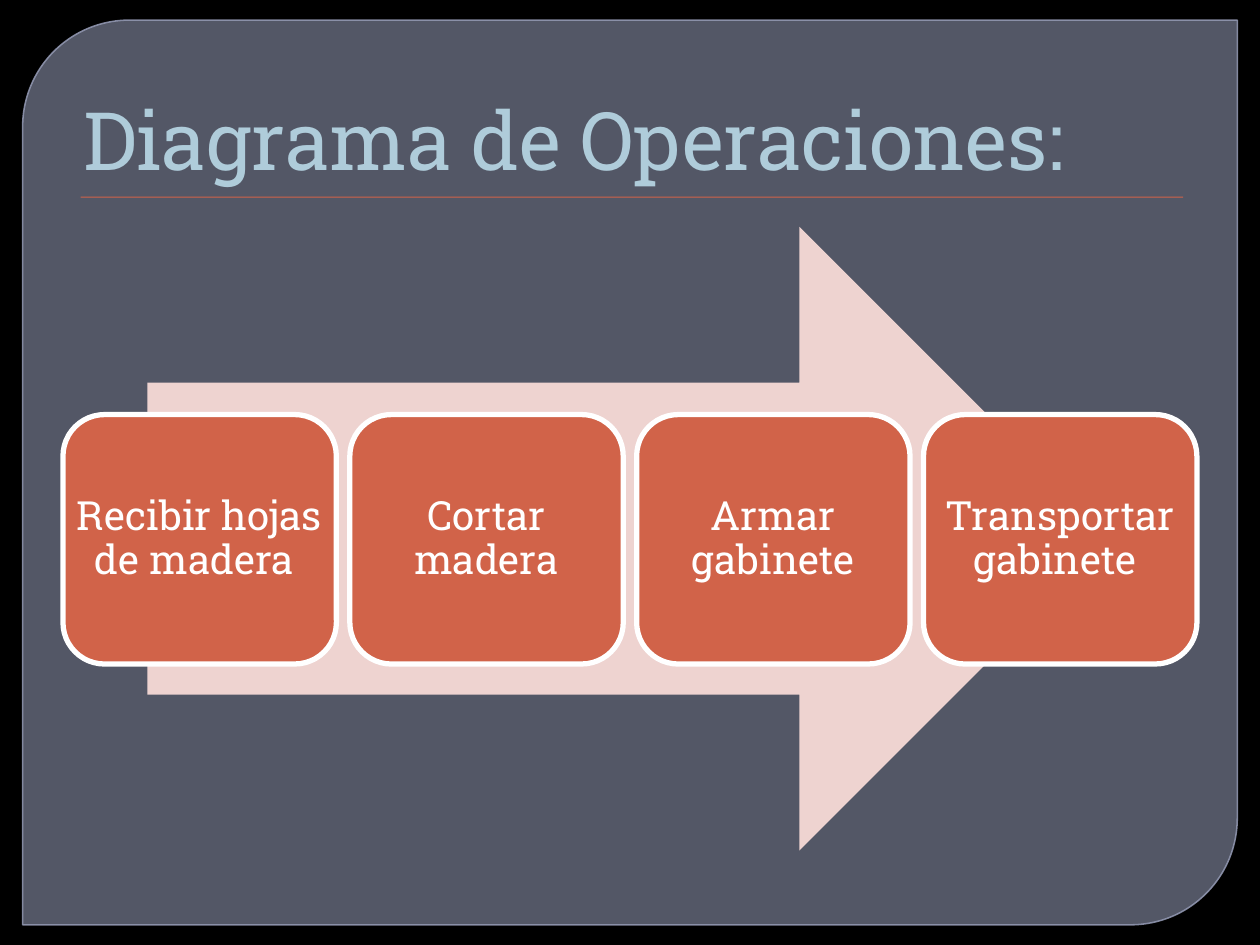
from dataclasses import dataclass

from lxml import etree
from pptx import Presentation
from pptx.dml.color import RGBColor
from pptx.enum import shapes, text
from pptx.oxml.ns import qn
from pptx.util import Inches, Pt

KIND = shapes.MSO_SHAPE


@dataclass(frozen=True)
class Theme:
    back: str = "000000"
    panel: str = "80869E"
    edge: str = "9298B2"
    accent: str = "D16349"
    arrow: str = "EED3D0"
    title: str = "AFCCDA"
    white: str = "FFFFFF"
    font: str = "Roboto Slab"
    big: int = 46
    small: int = 23


@dataclass(frozen=True)
class Box:
    left: float
    top: float
    width: float
    height: float

    def emu(self):
        return [Inches(v) for v in (self.left, self.top, self.width, self.height)]


THEME = Theme()
STEPS = [
    "Recibir hojas de madera ",
    "Cortar madera",
    "Armar gabinete",
    "Transportar gabinete ",
]
FIRST = Box(0.5, 3.29, 2.17, 1.98)
SPAN = 9.0


def paint(fill, color: str, alpha: int = 100) -> None:
    """Make a fill solid, with its opacity in percent."""
    fill.solid()
    fill.fore_color.rgb = RGBColor.from_string(color)
    if alpha < 100:
        tint = fill._xPr.find(qn("a:solidFill"))[0]
        etree.SubElement(tint, qn("a:alpha"), val=str(alpha * 1000))


def draw(slide, kind, box: Box, color: str, *, alpha: int = 100,
         edge: str = "", weight: float = 0, clear: int = 100):
    """Add a preset shape; clear is the opacity of its edge."""
    shape = slide.shapes.add_shape(kind, *box.emu())
    shape.shadow.inherit = False
    paint(shape.fill, color, alpha)
    if edge:
        paint(shape.line.fill, edge, clear)
        shape.line.width = Pt(weight)
    else:
        shape.line.fill.background()
    return shape


def write(shape, words: str, *, size: int, color: str, align, anchor,
          space: float = 1.0, pad: tuple = (0.1, 0.05, 0.1, 0.05)) -> None:
    frame = shape.text_frame
    frame.word_wrap = True
    frame.vertical_anchor = anchor
    (frame.margin_left, frame.margin_top,
     frame.margin_right, frame.margin_bottom) = [Inches(v) for v in pad]
    para = frame.paragraphs[0]
    para.alignment = align
    para.line_spacing = space
    run = para.add_run()
    run.text = words
    run.font.name = THEME.font
    run.font.size = Pt(size)
    run.font.color.rgb = RGBColor.from_string(color)


def main() -> None:
    deck = Presentation()
    deck.slide_width, deck.slide_height = Inches(10), Inches(7.5)
    slide = deck.slides.add_slide(deck.slide_layouts[6])
    paint(slide.background.fill, THEME.back)

    panel = draw(slide, KIND.ROUND_2_DIAG_RECTANGLE, Box(0.18, 0.16, 9.64, 7.18),
                 THEME.panel, alpha=65, edge=THEME.edge, weight=0.87, clear=88)
    panel.adjustments[0] = 0.118
    draw(slide, KIND.RECTANGLE, Box(0.64, 1.56, 8.75, 0.01), THEME.accent)

    title = slide.shapes.add_textbox(*Box(0.5, 0.28, 9, 1.25).emu())
    write(title, "Diagrama de Operaciones:", size=THEME.big, color=THEME.title,
          align=text.PP_ALIGN.LEFT, anchor=text.MSO_ANCHOR.BOTTOM,
          pad=(0.16, 0.05, 0.1, 0.05))

    draw(slide, KIND.RIGHT_ARROW, Box(1.17, 1.8, 7.65, 4.95), THEME.arrow)
    pitch = (SPAN - FIRST.width) / (len(STEPS) - 1)
    for i, words in enumerate(STEPS):
        box = Box(FIRST.left + i * pitch, FIRST.top, FIRST.width, FIRST.height)
        step = draw(slide, KIND.ROUNDED_RECTANGLE, box, THEME.accent,
                    edge=THEME.white, weight=3)
        write(step, words, size=THEME.small, color=THEME.white,
              align=text.PP_ALIGN.CENTER, anchor=text.MSO_ANCHOR.MIDDLE,
              space=0.9, pad=(0, 0, 0, 0))

    deck.save("out.pptx")


if __name__ == "__main__":
    main()
